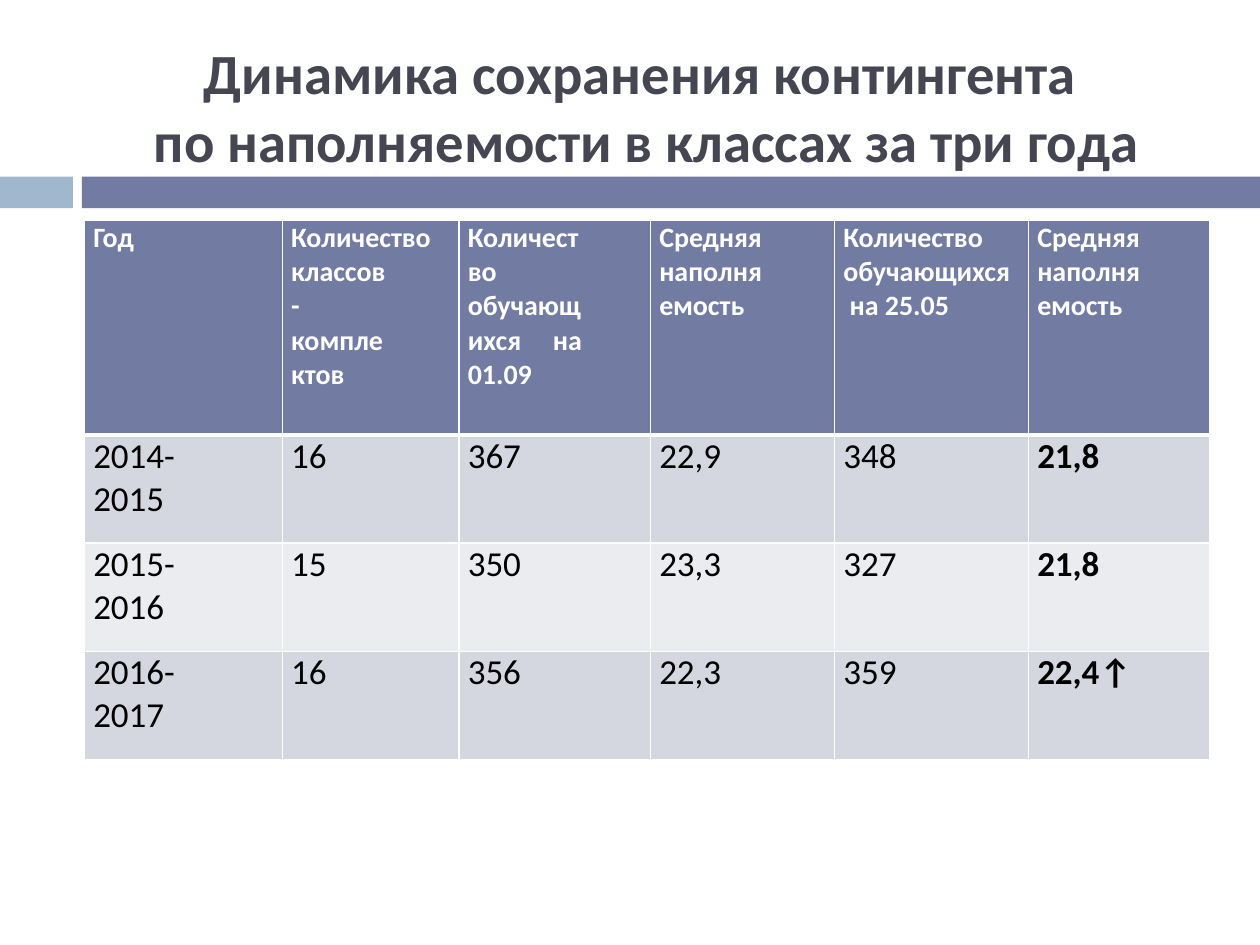
"""Build the slide on class sizes over three school years."""
from lxml.etree import SubElement
from pptx import Presentation
from pptx.dml.color import RGBColor
from pptx.enum.shapes import MSO_SHAPE
from pptx.enum.text import MSO_ANCHOR, MSO_AUTO_SIZE, PP_ALIGN
from pptx.oxml.ns import qn
from pptx.util import Cm, Pt

TITLE = "Динамика сохранения контингента \vпо наполняемости в классах за три года"
ROWS = [
    ["Год", "Количество \nклассов-комплектов", "Количество обучающихся на 01.09",
     "Средняя наполняемость", "Количество обучающихся\n на 25.05", "Средняя наполняемость"],
    ["2014-2015", "16", "367", "22,9", "348", "21,8"],
    ["2015-2016", "15", "350", "23,3", "327", "21,8"],
    ["2016-2017", "16", "356", "22,3", "359", "22,4↑"],
]
COL_WIDTHS = [3.99, 3.56, 3.86, 3.71, 3.91, 3.66]
ROW_HEIGHTS = [4.32, 2.18, 2.18, 2.18]
FILLS = ["727CA3", "D5D7E0", "EBECF0", "D5D7E0"]
BANDS = [(0, 1.47, "9FB8CD"), (1.65, 23.75, "727CA3")]
UNINDENTED = {"Количество ", "Количество обучающихся", " на 25.05"}
FONT = "Calibri"


def rgb(color):
    return RGBColor.from_string(color)


def style(p, size, color, bold, align):
    p.alignment = align
    for r in p.runs:
        f = r.font
        f.name, f.size, f.bold = FONT, Pt(size), bold
        f.color.rgb = rgb(color)


def add_borders(cell, bottom):
    tc_pr = cell._tc.get_or_add_tcPr()
    widths = {"a:lnL": 1, "a:lnR": 1, "a:lnT": 1, "a:lnB": bottom}
    for i, (tag, width) in enumerate(widths.items()):
        ln = SubElement(tc_pr, qn(tag), w=str(Pt(width)))
        SubElement(SubElement(ln, qn("a:solidFill")), qn("a:srgbClr"), val="FFFFFF")
        tc_pr.insert(i, ln)


def fill_cell(cell, text, row, col):
    header = row == 0
    cell.margin_left = cell.margin_right = Cm(0.18)
    cell.margin_top = cell.margin_bottom = 0
    cell.fill.solid()
    cell.fill.fore_color.rgb = rgb(FILLS[row])
    add_borders(cell, 3 if header else 1)
    cell.text_frame.text = text
    last = col == len(COL_WIDTHS) - 1
    for p in cell.text_frame.paragraphs:
        if p.text not in UNINDENTED:
            p._p.get_or_add_pPr().set("marR", str(Cm(1.2)))
        style(p, 16 if header else 20, "FFFFFF" if header else "000000",
              header or last, PP_ALIGN.JUSTIFY)


def add_bands(slide):
    for left, width, color in BANDS:
        sp = slide.shapes.add_shape(MSO_SHAPE.RECTANGLE, Cm(left), Cm(3.56), Cm(width), Cm(0.64))
        sp.shadow.inherit = False
        sp.fill.solid()
        sp.fill.fore_color.rgb = rgb(color)
        sp.line.fill.background()


def add_title(slide):
    title = slide.shapes.title
    title.left, title.top, title.width, title.height = Cm(1.7), Cm(0.64), Cm(22.66), Cm(2.74)
    tf = title.text_frame
    tf.text = TITLE
    tf.auto_size = MSO_AUTO_SIZE.NONE
    tf.vertical_anchor = MSO_ANCHOR.TOP
    style(tf.paragraphs[0], 32.4, "464653", True, PP_ALIGN.CENTER)


def add_class_table(slide):
    frame = slide.shapes.add_table(len(ROWS), len(COL_WIDTHS), Cm(1.7), Cm(4.45),
                                   Cm(sum(COL_WIDTHS)), Cm(sum(ROW_HEIGHTS)))
    table = frame.table
    for column, width in zip(table.columns, COL_WIDTHS):
        column.width = Cm(width)
    for i, (values, height) in enumerate(zip(ROWS, ROW_HEIGHTS)):
        table.rows[i].height = Cm(height)
        for j, text in enumerate(values):
            fill_cell(table.cell(i, j), text, i, j)


def main():
    prs = Presentation()
    prs.slide_width, prs.slide_height = Cm(25.4), Cm(19.05)
    slide = prs.slides.add_slide(prs.slide_layouts[5])
    add_bands(slide)
    add_title(slide)
    add_class_table(slide)
    prs.save("out.pptx")


if __name__ == "__main__":
    main()
